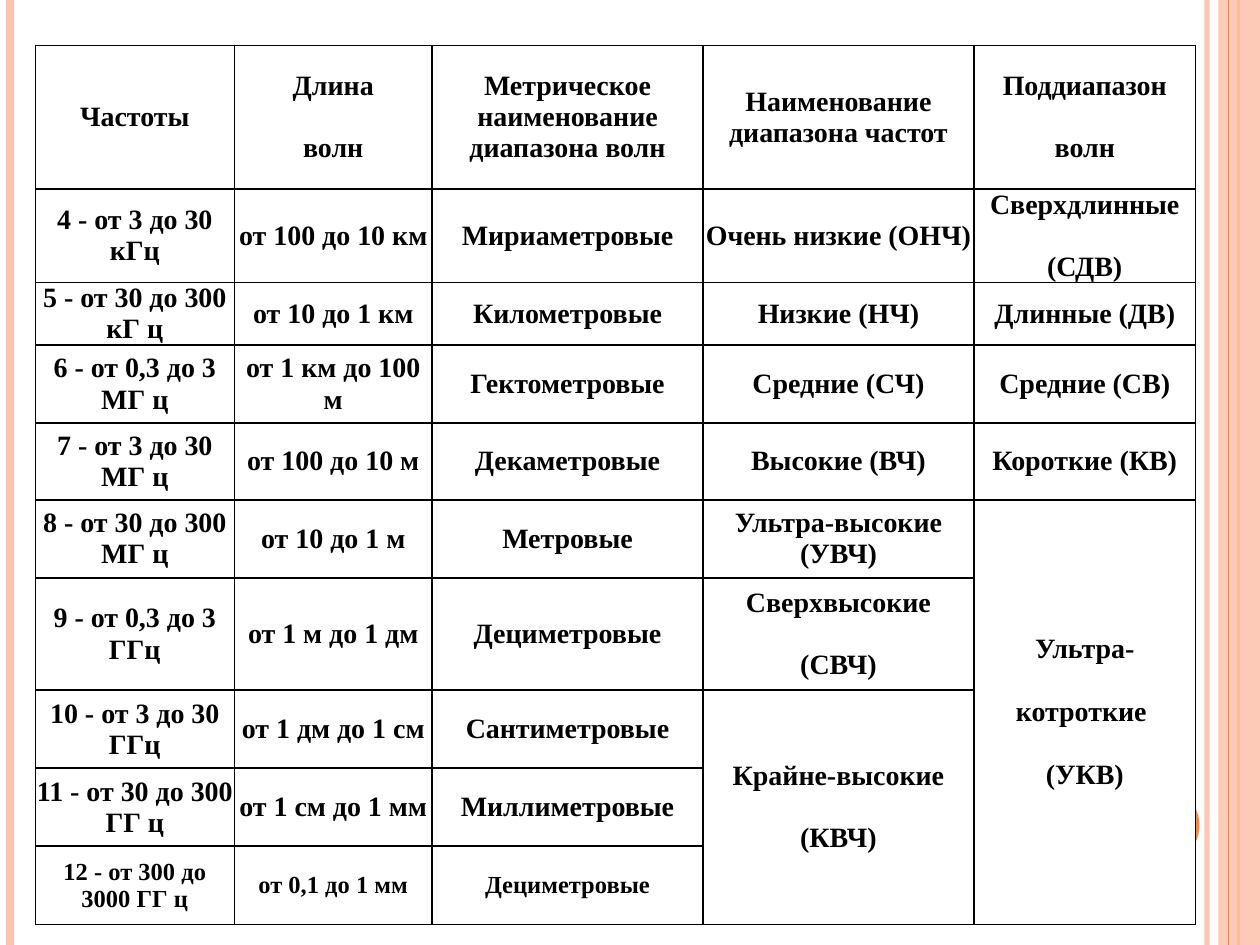
from dataclasses import dataclass

from lxml.etree import SubElement
from pptx import Presentation
from pptx.dml.color import RGBColor
from pptx.enum.shapes import MSO_CONNECTOR, MSO_SHAPE
from pptx.enum.text import MSO_ANCHOR, PP_ALIGN
from pptx.oxml import parse_xml
from pptx.oxml.ns import nsdecls, qn
from pptx.util import Inches, Pt

COLORS = {"peach": "FEC3AE", "orange": "FE8637", "black": "000000", "white": "FFFFFF"}
FONT = "Times New Roman"
SLIDE_WIDTH, SLIDE_HEIGHT = 10, 7.5


@dataclass
class Stripe:
    """A vertical line over the whole slide height."""
    x: float
    color: str
    weight: float
    opacity: int = 100


@dataclass
class Decoration:
    """A plain filled shape."""
    kind: MSO_SHAPE
    left: float
    top: float
    width: float
    height: float
    color: str
    opacity: int = 100


BACKDROP = [
    Stripe(9.58, "peach", 3, 93),
    Stripe(0.08, "peach", 4.5),
    Stripe(9.83, "orange", 1.5),
    Decoration(MSO_SHAPE.RECTANGLE, 9.67, 0, 0.33, SLIDE_HEIGHT, "peach", 87),
    Stripe(9.75, "orange", 0.75),
    Decoration(MSO_SHAPE.OVAL, 8.92, 6.25, 0.6, 0.6, "orange"),
]

COLUMN_WIDTHS = [1.58, 1.57, 2.15, 2.15, 1.76]
ROW_HEIGHTS = [1.14, 0.66, 0.46, 0.62, 0.61, 0.62, 0.89, 0.62, 0.62, 0.62]
ROWS = [
    ["Частоты", "Длина\nволн", "Метрическое наименование диапазона волн",
     "Наименование диапазона частот", "Поддиапазон\nволн"],
    ["4 - от 3 до 30 кГц", "от 100 до 10 км", "Мириаметровые",
     "Очень низкие (ОНЧ)", "Сверхдлинные\n(СДВ)"],
    ["5 - от 30 до 300 кГ ц", "от 10 до 1 км", "Километровые", "Низкие (НЧ)", "Длинные (ДВ)"],
    ["6 - от 0,3 до 3 МГ ц", "от 1 км до 100 м", "Гектометровые", "Средние (СЧ)", "Средние (СВ)"],
    ["7 - от 3 до 30 МГ ц", "от 100 до 10 м", "Декаметровые", "Высокие (ВЧ)", "Короткие (КВ)"],
    ["8 - от 30 до 300 МГ ц", "от 10 до 1 м", "Метровые",
     "Ультра-высокие (УВЧ)", "Ультра-\nкотроткие \n(УКВ)"],
    ["9 - от 0,3 до 3 ГГц", "от 1 м до 1 дм", "Дециметровые", "Сверхвысокие\n(СВЧ)", ""],
    ["10 - от 3 до 30 ГГц", "от 1 дм до 1 см", "Сантиметровые", "Крайне-высокие\n(КВЧ)", ""],
    ["11 - от 30 до 300 ГГ ц", "от 1 см до 1 мм", "Миллиметровые", "", ""],
    ["12 - от 300 до 3000 ГГ ц", "от 0,1 до 1 мм", "Дециметровые", "", ""],
]
MERGES = [((5, 4), (9, 4)), ((7, 3), (9, 3))]


def rgb(name: str) -> RGBColor:
    """Return a named colour."""
    return RGBColor.from_string(COLORS[name])


def set_opacity(shape, opacity: int) -> None:
    """Make the first colour of a shape partly transparent."""
    if opacity < 100:
        color = next(shape._element.spPr.iter(qn("a:srgbClr")))
        SubElement(color, qn("a:alpha")).set("val", str(opacity * 1000))


def draw_stripe(slide, stripe: Stripe) -> None:
    """Draw a vertical stripe without a shadow."""
    x = Inches(stripe.x)
    connector = slide.shapes.add_connector(
        MSO_CONNECTOR.STRAIGHT, x, Inches(0), x, Inches(SLIDE_HEIGHT))
    connector.line.color.rgb = rgb(stripe.color)
    connector.line.width = Pt(stripe.weight)
    set_opacity(connector, stripe.opacity)
    SubElement(connector._element.spPr, qn("a:effectLst"))


def draw_decoration(slide, item: Decoration) -> None:
    """Draw a filled shape without outline or shadow."""
    shape = slide.shapes.add_shape(
        item.kind, Inches(item.left), Inches(item.top), Inches(item.width), Inches(item.height))
    shape.shadow.inherit = False
    shape.fill.solid()
    shape.fill.fore_color.rgb = rgb(item.color)
    shape.line.fill.background()
    set_opacity(shape, item.opacity)


def style_cell(cell) -> None:
    """Give a cell its white fill, margins and black borders."""
    cell.fill.solid()
    cell.fill.fore_color.rgb = rgb("white")
    cell.vertical_anchor = MSO_ANCHOR.MIDDLE
    cell.margin_left = cell.margin_right = Inches(0.01)
    cell.margin_top = cell.margin_bottom = Inches(0)
    properties = cell._tc.get_or_add_tcPr()
    for index, side in enumerate("LRTB"):
        properties.insert(index, parse_xml(
            f'<a:ln{side} {nsdecls("a")} w="{Pt(1)}"><a:solidFill>'
            f'<a:srgbClr val="{COLORS["black"]}"/></a:solidFill></a:ln{side}>'))


def write_cell(cell, text: str, size: float) -> None:
    """Write centred bold paragraphs into a cell."""
    cell.text_frame.text = text
    for index, paragraph in enumerate(cell.text_frame.paragraphs):
        paragraph.alignment = PP_ALIGN.CENTER
        paragraph.space_before = Pt(18 if index else 0)
        paragraph.font.size = Pt(size)
        for run in paragraph.runs:
            run.font.name = FONT
            run.font.size = Pt(size)
            run.font.bold = True
            run.font.color.rgb = rgb("black")


def draw_wave_table(slide) -> None:
    """Draw the table of frequency and wave ranges."""
    table = slide.shapes.add_table(
        len(ROWS), len(COLUMN_WIDTHS), Inches(0.28), Inches(0.36),
        Inches(sum(COLUMN_WIDTHS)), Inches(sum(ROW_HEIGHTS))).table
    table.first_row = table.horz_banding = False
    for column, width in zip(table.columns, COLUMN_WIDTHS):
        column.width = Inches(width)
    for row, height in zip(table.rows, ROW_HEIGHTS):
        row.height = Inches(height)
    for start, end in MERGES:
        table.cell(*start).merge(table.cell(*end))
    for row_index, texts in enumerate(ROWS):
        size = 14 if row_index == len(ROWS) - 1 else 16
        for column_index, text in enumerate(texts):
            cell = table.cell(row_index, column_index)
            style_cell(cell)
            write_cell(cell, text, size)


def main() -> None:
    """Build and save the slide."""
    presentation = Presentation()
    presentation.slide_width = Inches(SLIDE_WIDTH)
    presentation.slide_height = Inches(SLIDE_HEIGHT)
    slide = presentation.slides.add_slide(presentation.slide_layouts[6])
    for item in BACKDROP:
        if isinstance(item, Stripe):
            draw_stripe(slide, item)
        else:
            draw_decoration(slide, item)
    draw_wave_table(slide)
    presentation.save("out.pptx")


if __name__ == "__main__":
    main()
